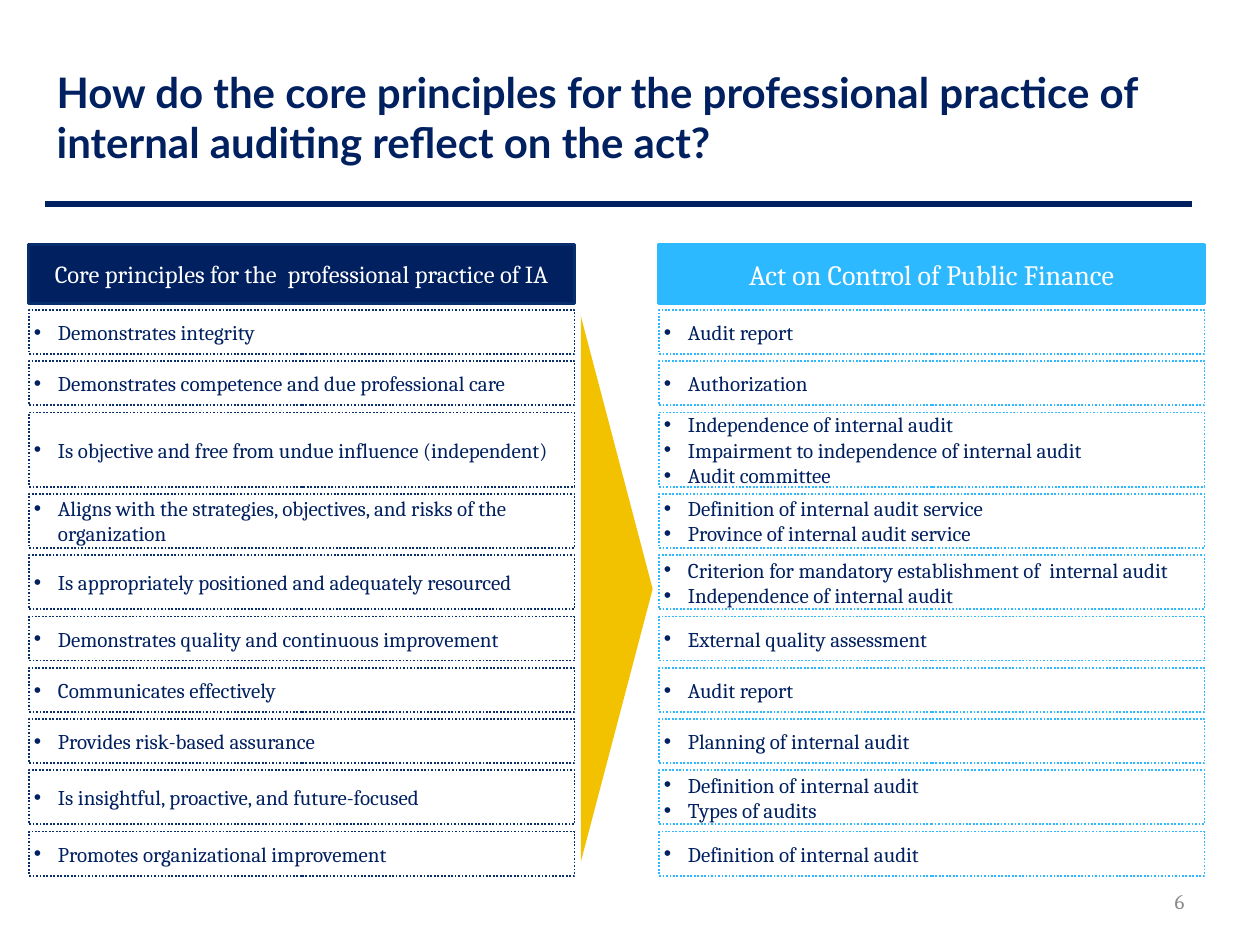
from lxml.etree import SubElement
from pptx import Presentation
from pptx.dml.color import RGBColor
from pptx.enum.dml import MSO_LINE
from pptx.enum.shapes import MSO_CONNECTOR, MSO_SHAPE
from pptx.enum.text import MSO_ANCHOR, MSO_AUTO_SIZE, PP_ALIGN
from pptx.oxml.ns import qn
from pptx.util import Inches, Pt

NAVY, NAVY_EDGE, SKY = "002060", "072D6D", "2DB9FF"
GOLD, WHITE, GREY = "F2C200", "FFFFFF", "8C8C8C"


def rgb(value):
    return RGBColor.from_string(value)


def write(paragraph, text, size, color, font="Cambria", bold=False, **paragraph_format):
    """Fill a paragraph with one formatted run."""
    run = paragraph.add_run()
    run.text = text
    for attribute, value in {"size": Pt(size), "name": font, "bold": bold}.items():
        setattr(run.font, attribute, value)
    run.font.color.rgb = rgb(color)
    for attribute, value in paragraph_format.items():
        setattr(paragraph, attribute, value)


prs = Presentation()
prs.slide_width, prs.slide_height = Inches(10), Inches(7.5)
slide = prs.slides.add_slide(prs.slide_layouts[5])
shapes = slide.shapes

# Title and rule
title = shapes.title
title.left, title.top, title.width, title.height = map(Inches, (0.35, 0.3, 9.15, 1.25))
title.text_frame.auto_size = MSO_AUTO_SIZE.NONE
title.text_frame.vertical_anchor = MSO_ANCHOR.MIDDLE
write(title.text_frame.paragraphs[0],
      "How do the core principles for the professional practice of internal auditing "
      "reflect on the act?",
      24, NAVY, font="Lato", bold=True,
      alignment=PP_ALIGN.LEFT, space_before=Pt(3), space_after=Pt(3))

rule = shapes.add_connector(MSO_CONNECTOR.STRAIGHT,
                            Inches(0.36), Inches(1.62), Inches(9.46), Inches(1.62))
rule.line.color.rgb = rgb(NAVY)
rule.line.width = Pt(3)
SubElement(rule._element.spPr, qn("a:effectLst"))

# Arrowhead between the columns
triangle = shapes.add_shape(MSO_SHAPE.ISOSCELES_TRIANGLE,
                            Inches(2.73), Inches(4.39), Inches(4.33), Inches(0.57))
triangle.rotation = 90
triangle.shadow.inherit = False
triangle.fill.solid()
triangle.fill.fore_color.rgb = rgb(GOLD)
triangle.line.fill.background()

# Column headers: left, text, size, fill, edge
COLUMN_WIDTH = 4.33
columns = [
    (0.23, "Core principles for the  professional practice of IA", 14, NAVY, NAVY_EDGE),
    (5.23, "Act on Control of Public Finance", 16, SKY, SKY),
]
for left, heading, size, fill, edge in columns:
    header = shapes.add_shape(MSO_SHAPE.RECTANGLE, Inches(left), Inches(1.94),
                              Inches(COLUMN_WIDTH), Inches(0.47))
    header.shadow.inherit = False
    header.fill.solid()
    header.fill.fore_color.rgb = rgb(fill)
    header.line.color.rgb = rgb(edge)
    header.line.width = Pt(1.75)
    header.text_frame.vertical_anchor = MSO_ANCHOR.MIDDLE
    write(header.text_frame.paragraphs[0], heading, size, WHITE, alignment=PP_ALIGN.CENTER)

# Rows: height, principle, matching parts of the act
rows = [
    (0.35, "Demonstrates integrity", ["Audit report"]),
    (0.35, "Demonstrates competence and due professional care", ["Authorization"]),
    (0.59, "Is objective and free from undue influence (independent)",
     ["Independence of internal audit", "Impairment to independence of internal audit",
      "Audit committee"]),
    (0.43, "Aligns with the strategies, objectives, and risks of the organization",
     ["Definition of internal audit service", "Province of internal audit service"]),
    (0.43, "Is appropriately positioned and adequately resourced",
     ["Criterion for mandatory establishment of  internal audit",
      "Independence of internal audit"]),
    (0.35, "Demonstrates quality and continuous improvement", ["External quality assessment"]),
    (0.35, "Communicates effectively", ["Audit report"]),
    (0.35, "Provides risk-based assurance", ["Planning of internal audit"]),
    (0.43, "Is insightful, proactive, and future-focused",
     ["Definition of internal audit", "Types of audits"]),
    (0.35, "Promotes organizational improvement", ["Definition of internal audit"]),
]
FIRST_TOP, LAST_BOTTOM = 2.46, 6.95
SPACED_ROWS = 4
gap = (LAST_BOTTOM - FIRST_TOP - sum(row[0] for row in rows)) / (len(rows) - 1)
cell_format = {
    "margin_left": Inches(0.04), "margin_right": Inches(0.04),
    "margin_top": 0, "margin_bottom": 0,
    "vertical_anchor": MSO_ANCHOR.MIDDLE, "word_wrap": True,
}

top = FIRST_TOP
for index, (height, principle, provisions) in enumerate(rows):
    for (left, _, _, _, edge), bullets in zip(columns, ([principle], provisions)):
        cell = shapes.add_shape(MSO_SHAPE.RECTANGLE, Inches(left), Inches(top),
                                Inches(COLUMN_WIDTH), Inches(height))
        cell.shadow.inherit = False
        cell.fill.background()
        cell.line.color.rgb = rgb(edge)
        cell.line.width = Pt(1)
        cell.line.dash_style = MSO_LINE.ROUND_DOT
        frame = cell.text_frame
        for attribute, value in cell_format.items():
            setattr(frame, attribute, value)
        spacing = Pt(4 if index < SPACED_ROWS and len(bullets) == 1 else 0)
        for position, text in enumerate(bullets):
            paragraph = frame.add_paragraph() if position else frame.paragraphs[0]
            write(paragraph, text, 12, NAVY, alignment=PP_ALIGN.LEFT,
                  space_before=spacing, space_after=spacing)
            properties = paragraph._p.get_or_add_pPr()
            properties.set("marL", str(Inches(0.19)))
            properties.set("indent", str(-Inches(0.19)))
            SubElement(properties, qn("a:buFont"), typeface="Arial")
            SubElement(properties, qn("a:buChar"), char="•")
    top += height + gap

# Page number
page_number = shapes.add_textbox(Inches(7.17), Inches(6.95), Inches(2.33), Inches(0.4))
page_number.text_frame.word_wrap = True
page_number.text_frame.vertical_anchor = MSO_ANCHOR.MIDDLE
write(page_number.text_frame.paragraphs[0], "6", 12, GREY, alignment=PP_ALIGN.RIGHT)

prs.save("out.pptx")
